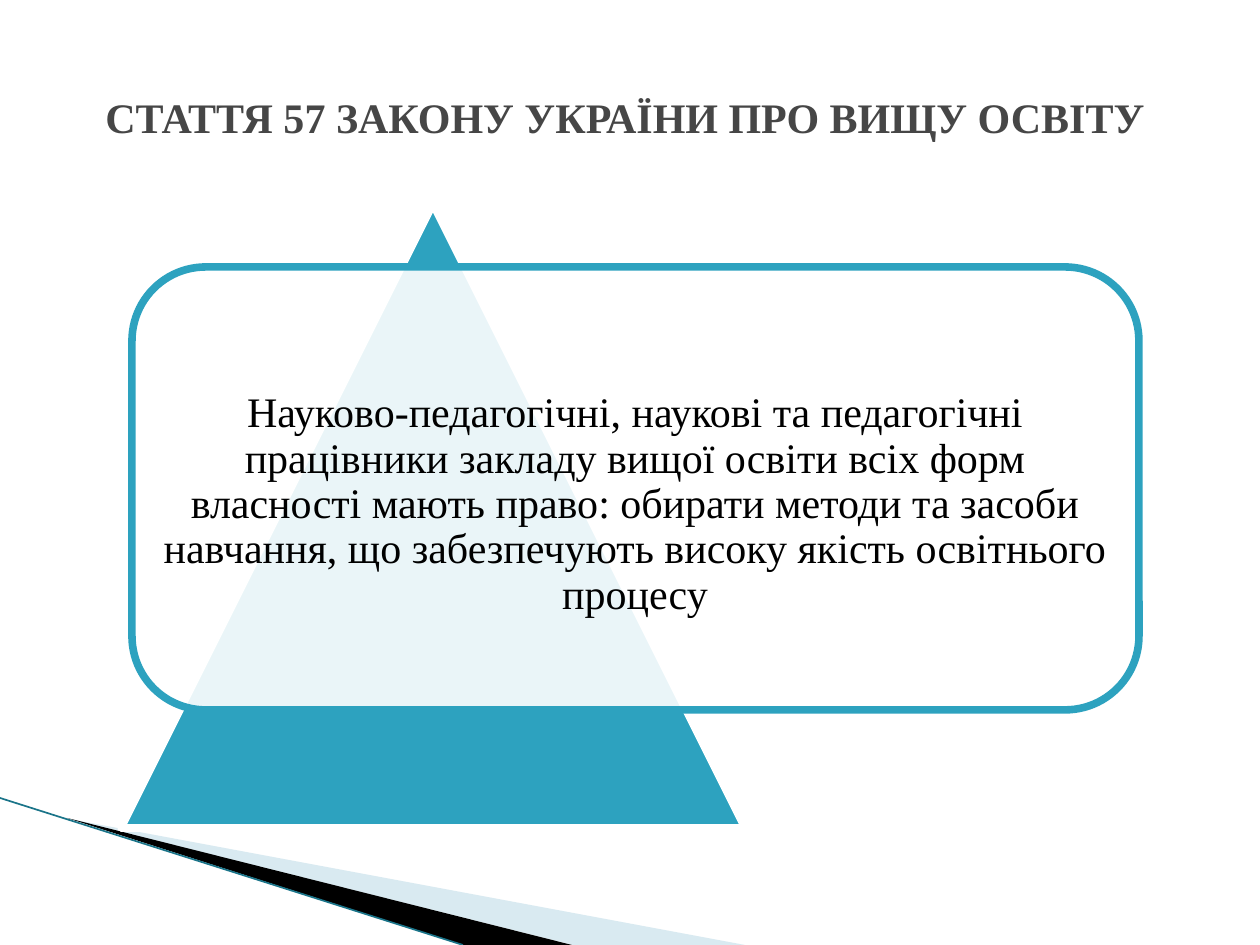
from lxml.etree import SubElement as Sub
from pptx import Presentation as Deck
from pptx.dml.color import RGBColor as Rgb
from pptx.enum.shapes import MSO_SHAPE as Kind, MSO_CONNECTOR as Link
from pptx.enum.text import PP_ALIGN as Align, MSO_ANCHOR as Anchor
from pptx.oxml.ns import qn
from pptx.util import Emu, Pt

SCALE = 914400 / 126
HUES = {"teal": "2DA2BF", "dark": "1A7489", "pale": "A0CBDC",
        "black": "000000", "white": "FFFFFF", "gray": "464646"}
TITLE = "СТАТТЯ 57 ЗАКОНУ УКРАЇНИ ПРО ВИЩУ ОСВІТУ"
BODY = ("Науково-педагогічні, наукові та педагогічні працівники закладу "
        "вищої освіти всіх форм власності мають право: обирати методи та "
        "засоби навчання, що забезпечують високу якість освітнього процесу")


def px(num):
    return Emu(round(num * SCALE))


def hue(name):
    return Rgb.from_string(HUES[name])


class Page:
    """Holds the text style and the current slide."""

    def __init__(self, deck):
        self.font = {"name": "Times New Roman", "size": Pt(24)}
        self.frame = {"word_wrap": True, "vertical_anchor": Anchor.MIDDLE}
        self.slide = deck.slides.add_slide(deck.slide_layouts[5])
        self.shapes = self.slide.shapes

    def paint(self, shape, fill, alpha=100, edge=None):
        shape.shadow.inherit = False
        shape.fill.solid()
        shape.fill.fore_color.rgb = hue(fill)
        if alpha < 100:
            tone = shape._element.spPr.find(".//" + qn("a:srgbClr"))
            Sub(tone, qn("a:alpha"), val=str(alpha * 1000))
        if edge:
            shape.line.color.rgb = hue(edge)
            shape.line.width = Pt(4.33)
        else:
            shape.line.fill.background()

    def wedge(self, points, fill, alpha=100):
        form = self.shapes.build_freeform(*points[0], scale=SCALE)
        form.add_line_segments(points[1:], close=True)
        self.paint(form.convert_to_shape(), fill, alpha)

    def line(self, start, end, color):
        link = self.shapes.add_connector(
            Link.STRAIGHT, *map(px, start + end))
        link.line.color.rgb = hue(color)
        link.line.width = Pt(0.95)
        Sub(link._element.spPr, qn("a:effectLst"))

    def shape(self, kind, box, fill, alpha, edge):
        item = self.shapes.add_shape(kind, *map(px, box))
        self.paint(item, fill, alpha, edge)

    def label(self, item, text, color, bold, space):
        frame = item.text_frame
        for key, val in self.frame.items():
            setattr(frame, key, val)
        frame.text = text
        para = frame.paragraphs[0]
        para.alignment = Align.CENTER
        para.line_spacing = space
        font = para.runs[0].font
        for key, val in {**self.font, "bold": bold}.items():
            setattr(font, key, val)
        font.color.rgb = hue(color)

    def title(self, box, text):
        item = self.shapes.title
        item.left, item.top, item.width, item.height = map(px, box)
        self.label(item, text, "gray", True, 1.0)

    def text(self, box, text):
        item = self.shapes.add_textbox(*map(px, box))
        for side in ("left", "top", "right", "bottom"):
            setattr(item.text_frame, "margin_" + side, px(9))
        self.label(item, text, "black", False, 0.9)


def main():
    deck = Deck()
    deck.slide_width, deck.slide_height = px(1260), px(945)
    page = Page(deck)
    page.wedge([(69, 819), (745, 945), (573, 945)], "pale", 40)
    page.wedge([(67, 818), (572, 945), (463, 945)], "black")
    page.line((0, 798), (463, 945), "dark")
    page.shape(Kind.ISOSCELES_TRIANGLE, (121, 204, 624, 624),
               "teal", 100, "white")
    page.shape(Kind.ROUNDED_RECTANGLE, (132, 267, 1007, 443),
               "white", 90, "teal")
    page.text((151, 305, 968, 400), BODY)
    page.title((58, 38, 1134, 158), TITLE)
    deck.save("out.pptx")


if __name__ == "__main__":
    main()
